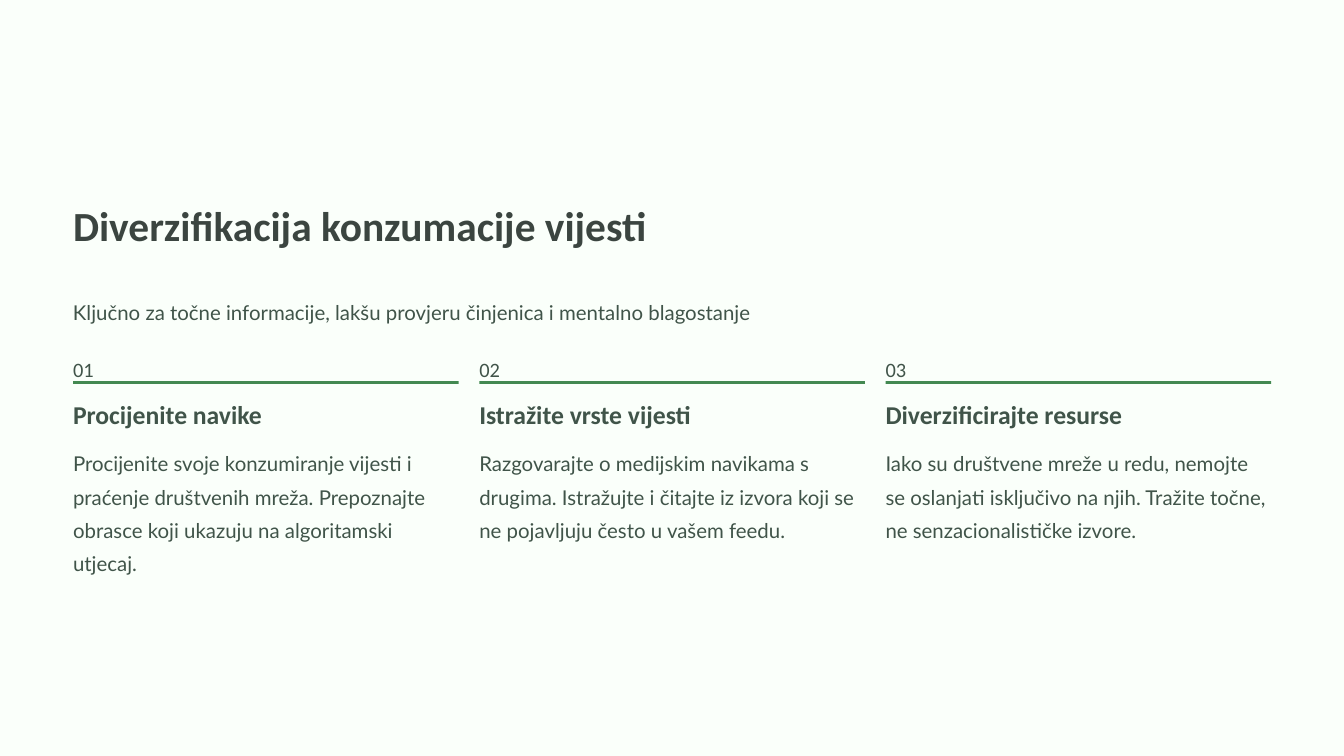
"""Build a slide with a title, a lead line and three numbered columns on news habits."""
from pptx import Presentation
from pptx.dml.color import RGBColor
from pptx.enum.shapes import MSO_SHAPE
from pptx.enum.text import MSO_ANCHOR, MSO_AUTO_SIZE, PP_ALIGN
from pptx.util import Pt

COLORS = {"paper": "FAFFFA", "title": "3B4540", "text": "405449", "rule": "438951"}
STYLES = {
    "title": {"name": "Calibri", "size": Pt(35.5), "bold": True},
    "heading": {"name": "Calibri", "size": Pt(22), "bold": True},
    "number": {"name": "Calibri", "size": Pt(17.5), "bold": False},
    "body": {"name": "Lato", "size": Pt(17.5), "bold": False},
}
FRAME = {"margin_left": 0, "margin_top": 0, "margin_right": 0, "margin_bottom": 0,
         "auto_size": MSO_AUTO_SIZE.NONE, "vertical_anchor": MSO_ANCHOR.TOP}
LEFT, COLUMN, PITCH = 62.6, 330.5, 348.2
STEPS = [
    ("Procijenite navike",
     "Procijenite svoje konzumiranje vijesti i praćenje društvenih mreža. "
     "Prepoznajte obrasce koji ukazuju na algoritamski utjecaj."),
    ("Istražite vrste vijesti",
     "Razgovarajte o medijskim navikama s drugima. "
     "Istražujte i čitajte iz izvora koji se ne pojavljuju često u vašem feedu."),
    ("Diverzificirajte resurse",
     "Iako su društvene mreže u redu, nemojte se oslanjati isključivo na njih. "
     "Tražite točne, ne senzacionalističke izvore."),
]


def write(sp, text, style, color="text", spacing=28.5, wrap=False):
    """Fill a shape with one formatted paragraph."""
    tf = sp.text_frame
    for key, value in FRAME.items():
        setattr(tf, key, value)
    tf.word_wrap = wrap
    p = tf.paragraphs[0]
    p.alignment = PP_ALIGN.LEFT
    p.line_spacing = Pt(spacing)
    r = p.add_run()
    r.text = text
    for key, value in STYLES[style].items():
        setattr(r.font, key, value)
    r.font.color.rgb = RGBColor.from_string(COLORS[color])


def add_text(x, y, w, h, *args, **kwargs):
    """Add a text box measured in points."""
    write(s.shapes.add_textbox(Pt(x), Pt(y), Pt(w), Pt(h)), *args, **kwargs)


prs = Presentation()
prs.slide_width, prs.slide_height = Pt(1152), Pt(648)
s = prs.slides.add_slide(prs.slide_layouts[5])
s.background.fill.solid()
s.background.fill.fore_color.rgb = RGBColor.from_string(COLORS["paper"])

title = s.shapes.title
title.left, title.top, title.width, title.height = Pt(LEFT), Pt(170), Pt(583), Pt(44.6)
write(title, "Diverzifikacija konzumacije vijesti", "title", "title", spacing=44.5)
add_text(LEFT, 249.8, 1026.7, 28.8,
         "Ključno za točne informacije, lakšu provjeru činjenica i mentalno blagostanje", "body")

for i, (heading, body) in enumerate(STEPS):
    x = LEFT + i * PITCH
    add_text(x, 298.8, 18, 22.3, f"{i + 1:02}", "number")
    rule = s.shapes.add_shape(MSO_SHAPE.RECTANGLE, Pt(x), Pt(326.6), Pt(COLUMN), Pt(2.4))
    rule.shadow.inherit = False
    rule.fill.solid()
    rule.fill.fore_color.rgb = RGBColor.from_string(COLORS["rule"])
    rule.line.fill.background()
    add_text(x, 340.6, 226, 28, heading, "heading", spacing=27.5)
    add_text(x, 379.4, COLUMN, 85.7, body, "body", wrap=True)

prs.save("out.pptx")
